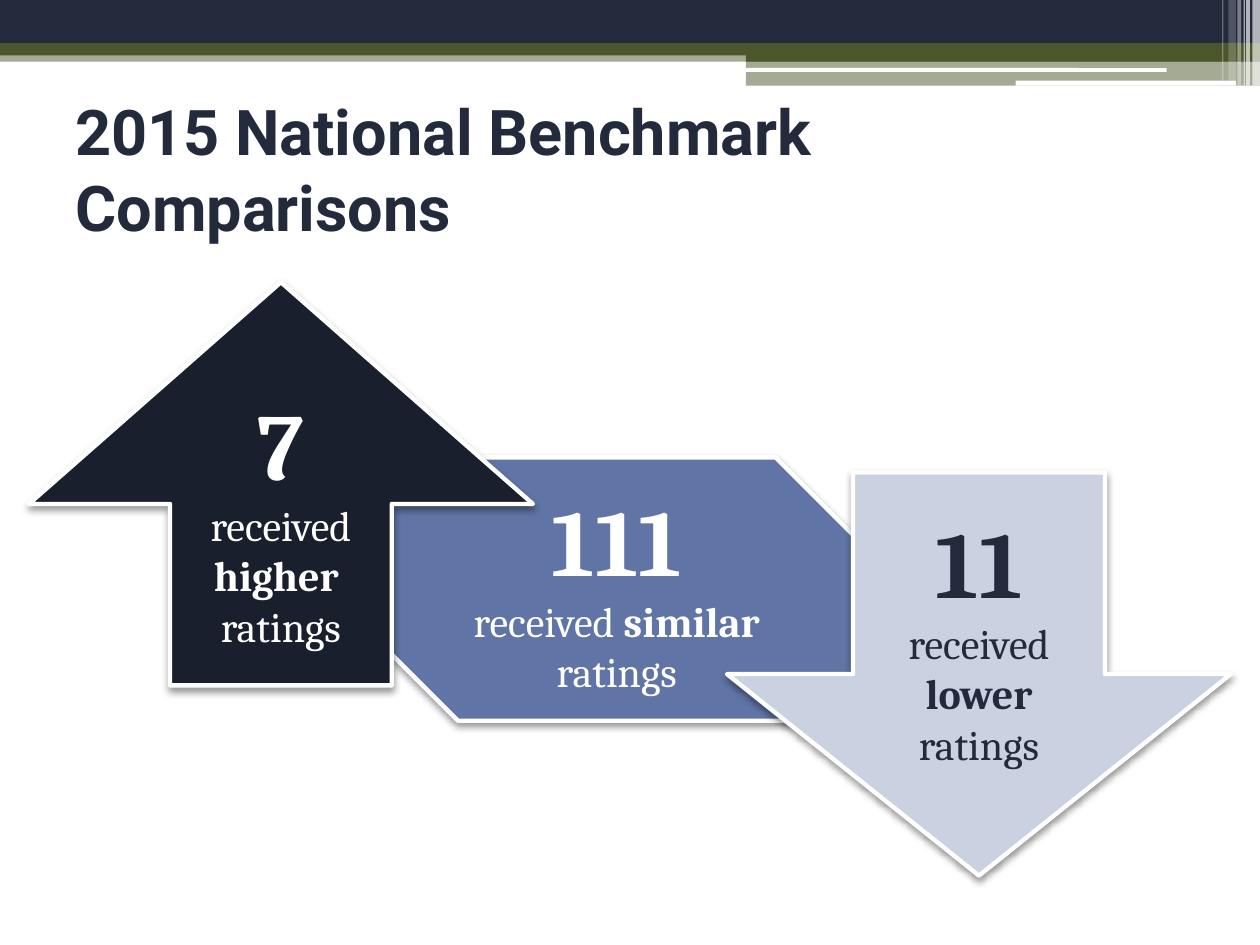
from lxml import etree
from pptx import Presentation
from pptx.dml.color import RGBColor
from pptx.enum.shapes import MSO_SHAPE
from pptx.enum.text import MSO_ANCHOR, PP_ALIGN
from pptx.oxml.ns import qn
from pptx.util import Inches, Pt

RECT, ROUNDED = MSO_SHAPE.RECTANGLE, MSO_SHAPE.ROUNDED_RECTANGLE
SNIPPED = MSO_SHAPE.SNIP_2_DIAG_RECTANGLE
UP, DOWN = MSO_SHAPE.UP_ARROW, MSO_SHAPE.DOWN_ARROW
TOP, MIDDLE, BOTTOM = MSO_ANCHOR.TOP, MSO_ANCHOR.MIDDLE, MSO_ANCHOR.BOTTOM
CENTER = PP_ALIGN.CENTER

NAVY, OLIVE, WHITE = "222A3C", "4C562C", "FFFFFF"
COLUMNS, ROWS = 100, 75


def color(value):
    return RGBColor.from_string(value)


class SlideBuilder:
    heading_font, body_font = "Roboto", "Cambria"

    def __init__(self, deck):
        self.page = deck.slides.add_slide(deck.slide_layouts[6])
        self.column = deck.slide_width / COLUMNS
        self.row = deck.slide_height / ROWS

    def place(self, left, top, width, height):
        """Turn grid columns and rows into lengths."""
        return (round(left * self.column), round(top * self.row),
                round(width * self.column), round(height * self.row))

    def style(self, span, font, size, shade, bold):
        span.font.name, span.font.size, span.font.bold = font, Pt(size), bold
        span.font.color.rgb = color(shade)

    def shape(self, parent, kind, area, fill, adjustments=()):
        shape = parent.add_shape(kind, *self.place(*area))
        for index, value in enumerate(adjustments):
            shape.adjustments[index] = value
        shape.fill.solid()
        shape.fill.fore_color.rgb = color(fill)
        shape.line.fill.background()
        shape.shadow.inherit = False
        return shape

    def bar(self, area, fill, opacity=100, kind=RECT):
        bar = self.shape(self.page.shapes, kind, area, fill)
        if opacity < 100:
            tint = bar.fill._xPr.find(".//" + qn("a:srgbClr"))
            etree.SubElement(tint, qn("a:alpha"), val=str(opacity * 1000))

    def title(self, area, text):
        box = self.page.shapes.add_textbox(*self.place(*area))
        frame = box.text_frame
        frame.word_wrap, frame.vertical_anchor = True, MIDDLE
        frame.text = text
        self.style(frame.paragraphs[0].runs[0], self.heading_font, 36, NAVY, True)

    def drop_shadow(self, shape):
        effects = shape._element.spPr.find(qn("a:effectLst"))
        shadow = etree.SubElement(
            effects, qn("a:outerShdw"), blurRad=str(Pt(4.1)), dist=str(Pt(2)),
            dir="5400000", rotWithShape="0")
        tint = etree.SubElement(shadow, qn("a:srgbClr"), val="000000")
        etree.SubElement(tint, qn("a:alpha"), val="40000")

    def rating(self, group, kind, area, fill, ink, count, level,
               anchor, inset, adjustments=()):
        shape = self.shape(group.shapes, kind, area, fill, adjustments)
        shape.line.color.rgb = color(WHITE)
        shape.line.width = Pt(2.5)
        self.drop_shadow(shape)

        frame = shape.text_frame
        frame.word_wrap, frame.vertical_anchor = True, anchor
        frame.margin_left = frame.margin_right = 0
        frame.margin_top = frame.margin_bottom = Inches(inset)
        frame.text = count
        number = frame.paragraphs[0]
        number.alignment = CENTER
        self.style(number.runs[0], self.body_font, 54, ink, True)

        para = frame.add_paragraph()
        para.alignment = CENTER
        for words, bold in (("received ", False), (level, True), ("ratings", False)):
            span = para.add_run()
            span.text = words
            self.style(span, self.body_font, 24, ink, bold)
            if bold:
                para.add_line_break()


def main():
    deck = Presentation()
    deck.slide_width, deck.slide_height = Inches(10), Inches(7.5)
    slide = SlideBuilder(deck)

    # Header bands
    slide.bar((0, 4, 100, 0.9), OLIVE, 50)
    slide.bar((0, 0, 100, 3.4), NAVY)
    slide.bar((0, 3.4, 100, 1), OLIVE)
    slide.bar((59.2, 3.9, 40.8, 1), OLIVE)
    slide.bar((59.2, 4.8, 40.8, 2), OLIVE, 50)
    slide.bar((59.1, 5.4, 33.5, 0.3), WHITE, kind=ROUNDED)
    slide.bar((80.6, 6.4, 17.5, 0.4), WHITE, kind=ROUNDED)

    # Translucent stripes at the right edge: left, width, height, opacity
    for left, width, height, opacity in (
            (99.4, 0.6, 6.8, 65), (98.9, 0.3, 6.8, 65), (98.7, 0.1, 6.8, 60),
            (98.2, 0.3, 6.8, 40), (97.5, 0.6, 6.4, 20), (97, 0.1, 6.4, 30)):
        slide.bar((left, 0, width, height), WHITE, opacity)

    slide.title((5, 9.2, 90, 8.3), "2015 National Benchmark Comparisons")

    # Rating shapes, from back to front
    group = slide.page.shapes.add_group_shape()
    slide.rating(group, SNIPPED, (28.2, 36.3, 41.5, 20.9), "6075A5", WHITE,
                 "111", "similar", MIDDLE, 0, (0, 0.39))
    slide.rating(group, UP, (2.3, 22.4, 40, 32), "1A1F2D", WHITE,
                 "7", "higher ", TOP, 0.05, (0.44, 0.55))
    slide.rating(group, DOWN, (57.7, 37.5, 40, 32), "CAD1E1", NAVY,
                 "11", "lower", BOTTOM, 0.05)

    deck.save("out.pptx")


if __name__ == "__main__":
    main()
